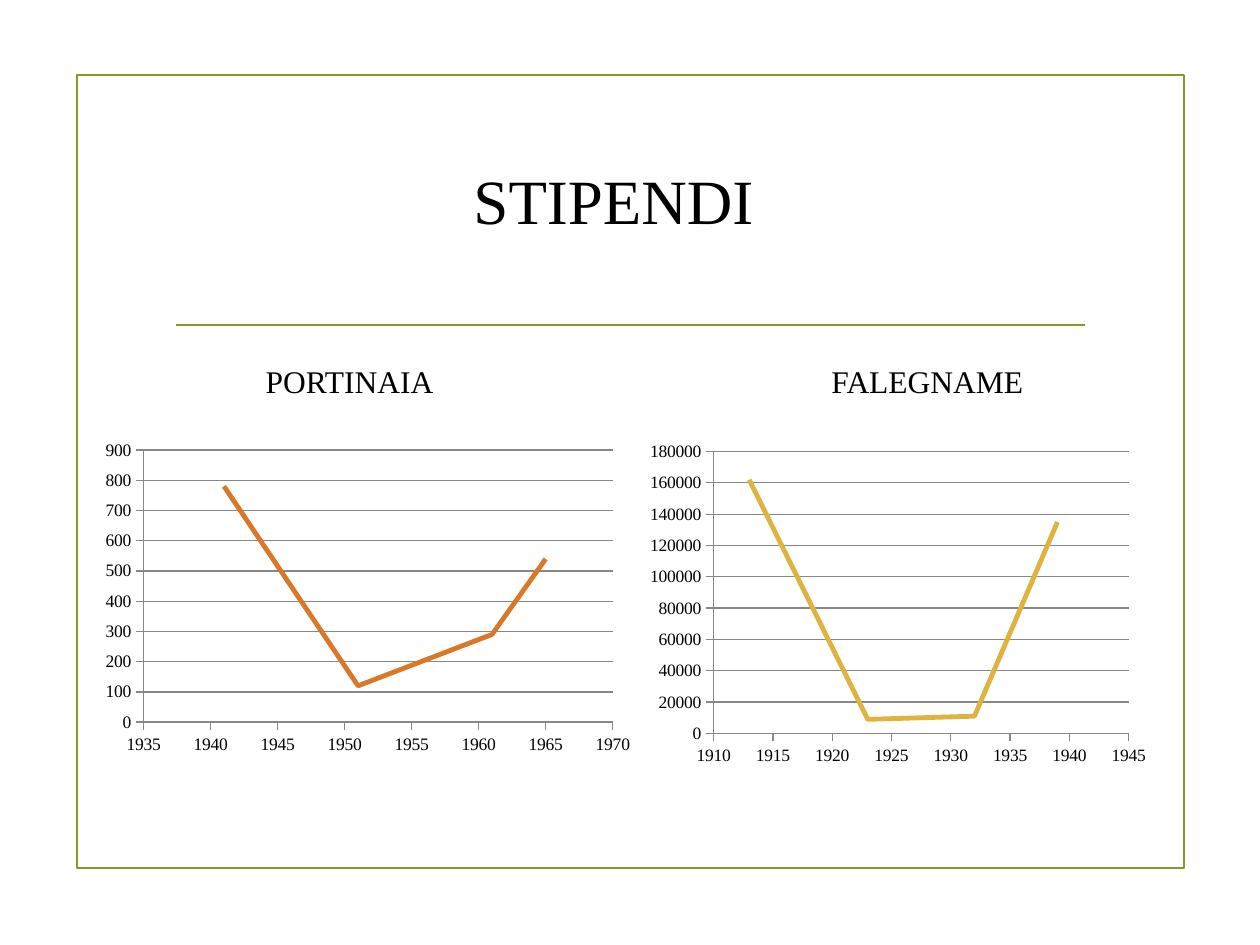
from dataclasses import dataclass

from lxml import etree
from pptx import Presentation
from pptx.chart.data import XyChartData
from pptx.dml.color import RGBColor
from pptx.enum.chart import XL_CHART_TYPE as ChartType, XL_TICK_MARK as TickMark
from pptx.enum.shapes import MSO_CONNECTOR as Connector, MSO_SHAPE as Shape
from pptx.enum.text import MSO_AUTO_SIZE as AutoSize
from pptx.oxml import parse_xml
from pptx.oxml.ns import nsdecls, qn
from pptx.util import Inches, Pt


@dataclass(frozen=True)
class Theme:
    font: str = "Times New Roman"
    ink: RGBColor = RGBColor.from_string("000000")
    green: RGBColor = RGBColor.from_string("83992A")
    orange: RGBColor = RGBColor.from_string("D97828")
    gold: RGBColor = RGBColor.from_string("DEB340")
    grid: RGBColor = RGBColor.from_string("878787")
    title: Pt = Pt(36)
    heading: Pt = Pt(18)
    axis: Pt = Pt(10)
    rule: Pt = Pt(1.25)
    curve: Pt = Pt(2.75)
    hairline: Pt = Pt(0.75)


theme = Theme()
deck = Presentation()
deck.slide_width, deck.slide_height = Inches(10), Inches(7.5)
slide = deck.slides.add_slide(deck.slide_layouts[6])


def area(left, top, width, height):
    """Turn percentages of the slide's width and height into lengths."""
    across, down = deck.slide_width / 100, deck.slide_height / 100
    return [int(share * unit) for share, unit in
            zip((left, top, width, height), (across, down, across, down))]


def set_font(font, size):
    font.name, font.size = theme.font, size
    font.color.rgb = theme.ink


# Frame and divider
frame = slide.shapes.add_shape(Shape.RECTANGLE, *area(6.1, 7.9, 87.9, 84))
frame.shadow.inherit = False
frame.fill.background()
divider = slide.shapes.add_connector(Connector.STRAIGHT, *area(14, 34.4, 86.1, 34.4))
etree.SubElement(divider._element.spPr, qn("a:effectLst"))
for outline in (frame.line, divider.line):
    outline.color.rgb, outline.width = theme.green, theme.rule

# Title and chart headings
for wording, place, size, wraps in (
    ("STIPENDI", (36.6, 16.4, 24.4, 9.5), theme.title, False),
    ("PORTINAIA", (20.1, 37.7, 21.3, 5.3), theme.heading, True),
    ("FALEGNAME", (65, 37.7, 22, 5.3), theme.heading, True),
):
    label = slide.shapes.add_textbox(*area(*place)).text_frame
    label.word_wrap = wraps
    label.auto_size = AutoSize.SHAPE_TO_FIT_TEXT
    label.text = wording
    set_font(label.paragraphs[0].runs[0].font, size)

# Wage curves: place, inner plot shares, year axis, wage axis, colour, points
wage_curves = (
    ((7.5, 45.9, 43.3, 34.7), (0.09, 0.05, 0.86, 0.83),
     (1935, 1970, 5), (0, 900, 100), theme.orange,
     ((1941, 780), (1951, 120), (1961, 290), (1965, 540))),
    ((50.8, 45.3, 41.7, 35.7), (0.14, 0.07, 0.79, 0.84),
     (1910, 1945, 5), (0, 180000, 20000), theme.gold,
     ((1913, 162000), (1923, 9000), (1932, 11000), (1939, 135000))),
)
for place, plot_shares, years, wages, colour, points in wage_curves:
    data = XyChartData()
    wage_points = data.add_series("Series 1")
    for year, wage in points:
        wage_points.add_data_point(year, wage)
    chart = slide.shapes.add_chart(
        ChartType.XY_SCATTER_SMOOTH_NO_MARKERS, *area(*place), data).chart
    chart.has_legend = chart.has_title = False
    set_font(chart.font, theme.heading)

    curve = chart.plots[0].series[0]
    curve.smooth = True
    curve.format.line.color.rgb, curve.format.line.width = colour, theme.curve
    chart.plots[0].vary_by_categories = False

    for axis, scale in ((chart.category_axis, years), (chart.value_axis, wages)):
        axis.minimum_scale, axis.maximum_scale, axis.major_unit = scale
        axis.major_tick_mark, axis.minor_tick_mark = TickMark.OUTSIDE, TickMark.NONE
        axis.has_major_gridlines = scale is wages
        axis.tick_labels.number_format = "General"
        axis.tick_labels.number_format_is_linked = False
        set_font(axis.tick_labels.font, theme.axis)
        axis.format.line.color.rgb, axis.format.line.width = theme.grid, theme.hairline
    gridline = chart.value_axis.major_gridlines.format.line
    gridline.color.rgb, gridline.width = theme.grid, theme.hairline

    plot_area = chart._chartSpace.chart.plotArea
    for automatic in plot_area.findall(qn("c:layout")):
        plot_area.remove(automatic)
    shares = "".join(f'<c:{side} val="{share}"/>'
                     for side, share in zip("xywh", plot_shares))
    plot_area.insert(0, parse_xml(
        f'<c:layout {nsdecls("c")}><c:manualLayout><c:layoutTarget val="inner"/>'
        f'<c:xMode val="edge"/><c:yMode val="edge"/>{shares}'
        '</c:manualLayout></c:layout>'))

deck.save("out.pptx")
